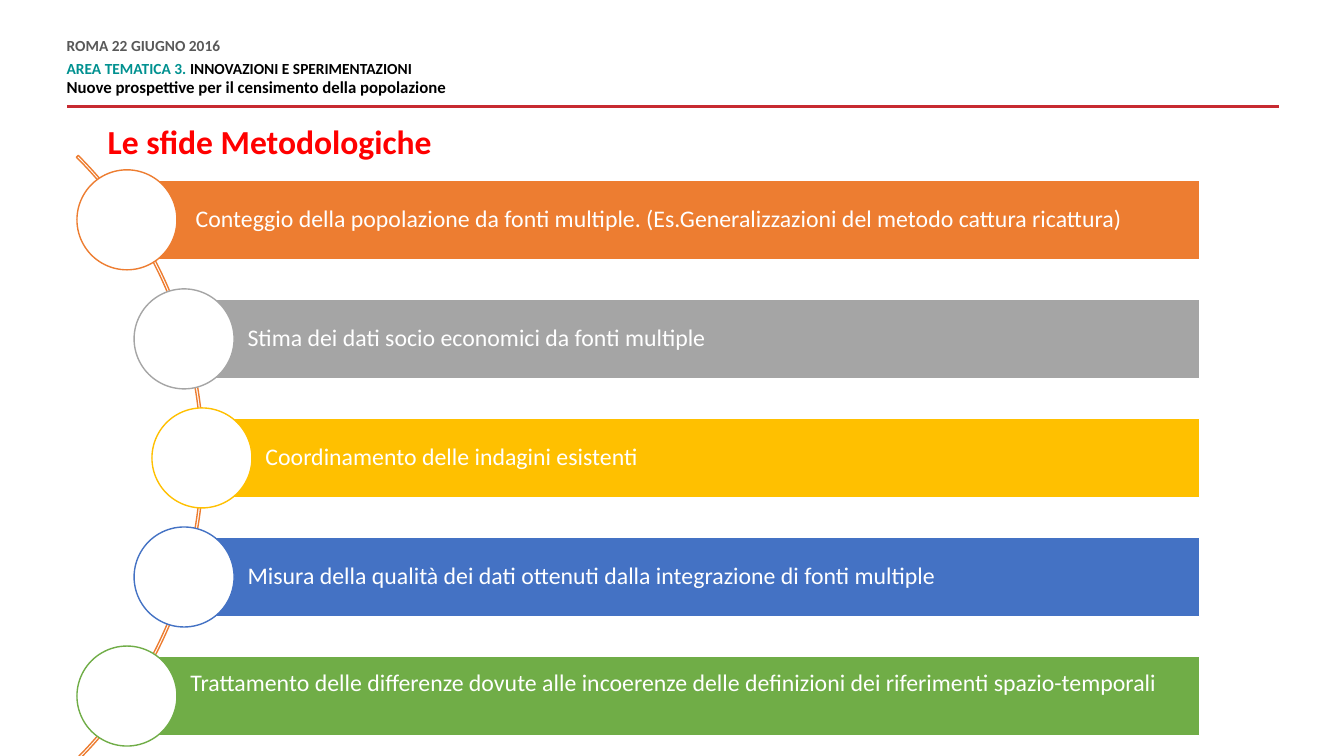
from pptx import Presentation
from pptx.dml.color import RGBColor as Rgb
from pptx.enum.shapes import MSO_CONNECTOR as Link, MSO_SHAPE as Form
from pptx.enum.text import MSO_ANCHOR as Anchor, PP_ALIGN as Align
from pptx.oxml.ns import qn
from pptx.util import Cm, Pt
from lxml import etree

HUES = {
    "rule": "C72A31", "date": "595959", "area": "009190", "ink": "000000",
    "title": "FF0000", "white": "FFFFFF", "orange": "ED7D31",
    "grey": "A5A5A5", "gold": "FFC000", "blue": "4472C4", "green": "70AD47",
}

ITEMS = [
    ("Conteggio della popolazione da fonti multiple. (Es.Generalizzazioni del metodo cattura ricattura)",
     "orange", 3.2, 1.73, 0.13),
    ("Stima dei dati socio economici da fonti multiple", "grey", 4.64, 1.6, 0.13),
    ("Coordinamento delle indagini esistenti", "gold", 5.09, 1.6, 0.13),
    ("Misura della qualità dei dati ottenuti dalla integrazione di fonti multiple",
     "blue", 4.64, 1.6, 0.13),
    ("Trattamento delle differenze dovute alle incoerenze delle definizioni dei riferimenti spazio-temporali",
     "green", 3.2, 1.6, 0.73),
]
TOP, STEP = 5.54, 3.0
RIGHT, TALL, DISC = 30.23, 2.0, 2.52


class Deck:
    face = "Calibri"

    def __init__(self):
        self.prs = Presentation()
        self.prs.slide_width, self.prs.slide_height = Cm(33.87), Cm(19.05)
        self.slide = self.prs.slides.add_slide(self.prs.slide_layouts[5])

    def hue(self, name):
        return Rgb.from_string(HUES[name])

    def style(self, font, size, hue=None, bold=False):
        font.name, font.size, font.bold = self.face, Pt(size), bold
        if hue:
            font.color.rgb = self.hue(hue)

    def title(self, text, x, y, w, h):
        box = self.slide.shapes.title
        box.left, box.top, box.width, box.height = Cm(x), Cm(y), Cm(w), Cm(h)
        box.text_frame.text = text
        box.text_frame.vertical_anchor = Anchor.MIDDLE
        para = box.text_frame.paragraphs[0]
        para.alignment = Align.LEFT
        self.style(para.font, 24, "title", True)

    def header(self, rows, x, y, w, h):
        frame = self.slide.shapes.add_textbox(Cm(x), Cm(y), Cm(w), Cm(h)).text_frame
        frame.word_wrap = True
        frame.margin_left = frame.margin_right = 0
        frame.margin_top = frame.margin_bottom = 0
        for i, (parts, size, before, after) in enumerate(rows):
            para = frame.add_paragraph() if i else frame.paragraphs[0]
            para.line_spacing = Pt(10.8)
            para.space_before, para.space_after = Pt(before), Pt(after)
            self.style(para.font, size, bold=True)
            for text, hue in parts:
                run = para.add_run()
                run.text = text
                run.font.color.rgb = self.hue(hue)

    def rule(self, x, y, end):
        line = self.slide.shapes.add_connector(Link.STRAIGHT, Cm(end), Cm(y), Cm(x), Cm(y))
        line.line.color.rgb = self.hue("rule")
        line.line.width = Pt(2)
        etree.SubElement(line._element.spPr, qn("a:effectLst"))

    def shape(self, form, x, y, w, h, fill, edge):
        item = self.slide.shapes.add_shape(form, Cm(x), Cm(y), Cm(w), Cm(h))
        item.shadow.inherit = False
        if fill:
            item.fill.solid()
            item.fill.fore_color.rgb = self.hue(fill)
        else:
            item.fill.background()
        item.line.color.rgb = self.hue(edge)
        item.line.width = Pt(1)
        return item

    def arc(self, x, y, size):
        band = self.shape(Form.BLOCK_ARC, x, y, size, size, None, "orange")
        for i, value in enumerate((189, 27, 0.003)):
            band.adjustments[i] = value

    def item(self, text, hue, x, mid, left, low):
        bar = self.shape(Form.RECTANGLE, x, mid - TALL / 2, RIGHT - x, TALL, hue, "white")
        frame = bar.text_frame
        frame.word_wrap = True
        frame.vertical_anchor = Anchor.MIDDLE
        frame.margin_left, frame.margin_right = Cm(left), Cm(0.13)
        frame.margin_top, frame.margin_bottom = Cm(0.13), Cm(low)
        frame.text = text
        para = frame.paragraphs[0]
        para.alignment = Align.LEFT
        para.line_spacing = 0.9
        self.style(para.font, 17, "white")
        self.shape(Form.OVAL, x - DISC / 2, mid - DISC / 2, DISC, DISC, "white", hue)


def main():
    deck = Deck()
    deck.rule(1.68, 2.69, 32.23)
    deck.header([
        ([("ROMA 22 GIUGNO 2016", "date")], 11, 0, 6),
        ([("AREA TEMATICA 3. ", "area"), ("INNOVAZIONI E SPERIMENTAZIONI", "ink")], 11, 0, 0),
        ([("Nuove prospettive per il censimento della popolazione", "ink")], 12, 3, 6),
    ], 1.68, 0.99, 21.18, 1.5)
    deck.title("Le sfide Metodologiche", 2.46, 2.92, 27.91, 1.27)
    deck.arc(-16.43, 0.76, 21.56)
    for i, (text, hue, x, left, low) in enumerate(ITEMS):
        deck.item(text, hue, x, TOP + i * STEP, left, low)
    deck.prs.save("out.pptx")


if __name__ == "__main__":
    main()
